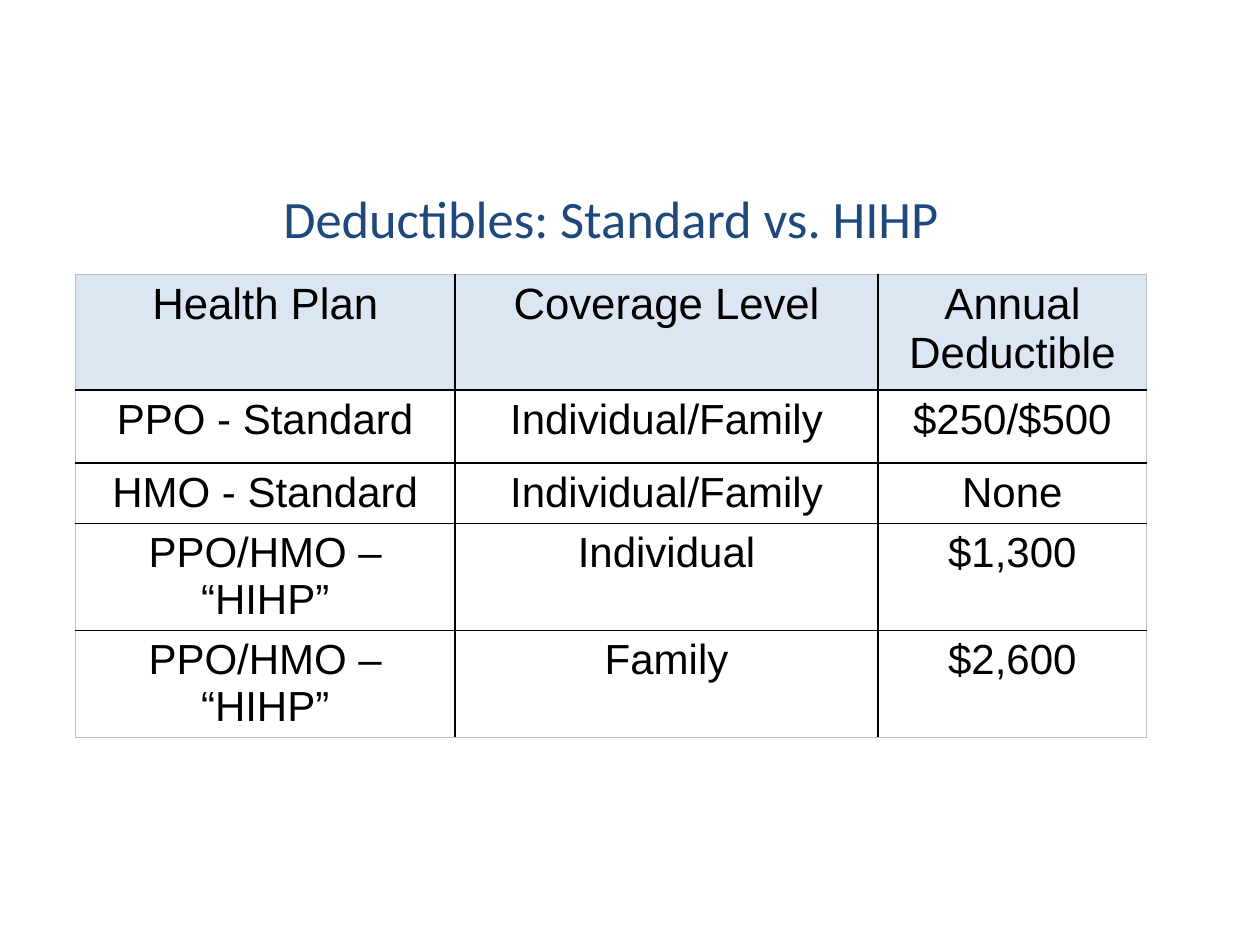
import pptx
import pptx.util
import pptx.dml.color
import pptx.enum.text
import pptx.oxml
import pptx.oxml.ns
from lxml import etree

HUES = {"title": "1F497D", "text": "000000", "head": "DCE6F2",
        "grid": "000000", "edge": "BFBFBF"}
WIDE, HIGH = 10, 7.5
COLS = [3.01, 3.36, 2.13]
ROWS = [0.92, 0.58, 0.48, 0.85, 0.85]
PLANS = [
    ["Health Plan", "Coverage Level", "Annual Deductible"],
    ["PPO - Standard", "Individual/Family", "$250/$500"],
    ["HMO - Standard", "Individual/Family", "None"],
    ["PPO/HMO – “HIHP”", "Individual", "$1,300"],
    ["PPO/HMO – “HIHP”", "Family", "$2,600"],
]


def write(frame, text, size=24, font="Arial", hue="text"):
    frame.word_wrap = True
    para = frame.paragraphs[0]
    para.alignment = pptx.enum.text.PP_ALIGN.CENTER
    run = para.add_run()
    run.text = text
    run.font.size = pptx.util.Pt(size)
    run.font.name = font
    run.font.color.rgb = pptx.dml.color.RGBColor.from_string(HUES[hue])


class Page:
    def __init__(self, deck):
        self.deck = deck
        self.slide = deck.slides.add_slide(deck.slide_layouts[5])

    def box(self, left, top, width, height):
        wide, high = self.deck.slide_width, self.deck.slide_height
        return (int(left * wide), int(top * high),
                int(width * wide), int(height * high))

    def title(self, text, *place):
        shape = self.slide.shapes.title
        shape.left, shape.top, shape.width, shape.height = self.box(*place)
        frame = shape.text_frame
        frame.auto_size = pptx.enum.text.MSO_AUTO_SIZE.NONE
        frame.vertical_anchor = pptx.enum.text.MSO_ANCHOR.TOP
        write(frame, text, size=30, font="Calibri", hue="title")

    def border(self, cell, outer):
        props = cell._tc.get_or_add_tcPr()
        for spot, (side, edge) in enumerate(zip("LRTB", outer)):
            line = etree.Element(pptx.oxml.ns.qn("a:ln" + side),
                                 w=str(pptx.util.Pt(0.5 if edge else 1)))
            fill = etree.SubElement(line, pptx.oxml.ns.qn("a:solidFill"))
            etree.SubElement(fill, pptx.oxml.ns.qn("a:srgbClr"),
                             val=HUES["edge" if edge else "grid"])
            props.insert(spot, line)

    def table(self, data, cols, rows, *place):
        grid = self.slide.shapes.add_table(
            len(rows), len(cols), *self.box(*place)).table
        grid.horz_banding = False
        grid.first_row = False
        for col, width in zip(grid.columns, cols):
            col.width = pptx.util.Inches(width)
        for row, height in zip(grid.rows, rows):
            row.height = pptx.util.Inches(height)
        for y, line in enumerate(data):
            for x, text in enumerate(line):
                cell = grid.cell(y, x)
                if y == 0:
                    cell.fill.solid()
                    cell.fill.fore_color.rgb = (
                        pptx.dml.color.RGBColor.from_string(HUES["head"]))
                else:
                    cell.fill.background()
                write(cell.text_frame, text, size=24 if y else 25)
                self.border(cell, (x == 0, x == len(cols) - 1,
                                   y == 0, y == len(rows) - 1))


def main():
    deck = pptx.Presentation()
    deck.slide_width = pptx.util.Inches(WIDE)
    deck.slide_height = pptx.util.Inches(HIGH)
    page = Page(deck)
    page.table(PLANS, COLS, ROWS, 0.06, 0.29, sum(COLS) / WIDE, sum(ROWS) / HIGH)
    page.title("Deductibles: Standard vs. HIHP", 0.04, 0.19, 0.89, 0.08)
    deck.save("out.pptx")


if __name__ == "__main__":
    main()
